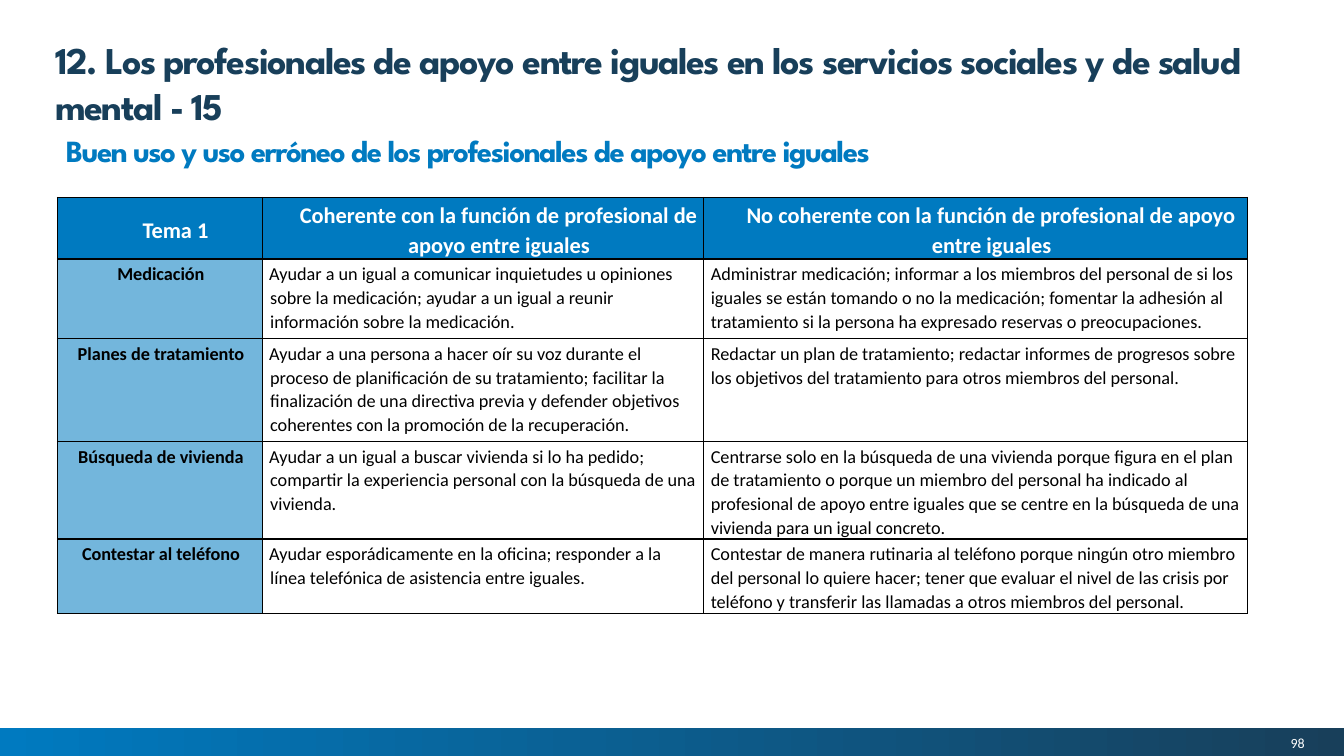
"""Build the slide on good and wrong use of peer support workers."""
from lxml.etree import SubElement
from pptx import Presentation
from pptx.dml.color import RGBColor
from pptx.enum.shapes import MSO_SHAPE
from pptx.enum.text import MSO_ANCHOR, PP_ALIGN
from pptx.oxml import parse_xml
from pptx.oxml.ns import nsdecls, qn
from pptx.util import Inches, Pt

NAVY, BLUE, SKY, WHITE, BLACK = "183F5A", "007AC0", "73B6DC", "FFFFFF", "000000"
HEAD, BODY = "League Spartan", "Calibri"
LEFT, MID, RIGHT = PP_ALIGN.LEFT, PP_ALIGN.CENTER, PP_ALIGN.RIGHT
TOP, CORE, BASE = MSO_ANCHOR.TOP, MSO_ANCHOR.MIDDLE, MSO_ANCHOR.BOTTOM


def tint(color, code):
    color.rgb = RGBColor.from_string(code)


def write(frame, text, code, space, align, **style):
    para = frame.paragraphs[0]
    para.line_spacing, para.alignment = space, align
    run = para.add_run()
    run.text = text
    for key, value in style.items():
        setattr(run.font, key, value)
    tint(run.font.color, code)
    return para


deck = Presentation()
deck.slide_width, deck.slide_height = Inches(13.33), Inches(7.5)
col, row = deck.slide_width / 100, deck.slide_height / 100
slide = deck.slides.add_slide(deck.slide_layouts[6])
shapes = slide.shapes

bar = shapes.add_shape(MSO_SHAPE.RECTANGLE, 0, int(96.27 * row),
                       deck.slide_width, int(3.73 * row))
bar.shadow.inherit = False
bar.line.fill.background()
bar.fill.gradient()
bar.fill.gradient_angle = 0
for stop, code, spot in zip(bar.fill.gradient_stops, (BLUE, NAVY), (0, 1)):
    tint(stop.color, code)
    stop.position = spot

labels = [
    ("12. Los profesionales de apoyo entre iguales en los servicios sociales y de salud mental - 15",
     (3.38, 4.13, 92.8, 6.27), (0.1, 0.05), TOP, NAVY, Pt(33), LEFT,
     dict(name=HEAD, size=Pt(27), bold=True)),
    ("Buen uso y uso erróneo de los profesionales de apoyo entre iguales",
     (4.9, 17.07, 91.1, 5.2), (0, 0), BASE, BLUE, Pt(33), LEFT,
     dict(name=HEAD, size=Pt(22), bold=True)),
    ("98", (83.57, 96.67, 13.5, 3.2), (0, 0), CORE, WHITE, 1.0, RIGHT,
     dict(name=BODY, size=Pt(10))),
]
for text, (x, y, wide, high), (side, edge), anchor, code, space, align, style in labels:
    box = shapes.add_textbox(int(x * col), int(y * row), int(wide * col), int(high * row))
    frame = box.text_frame
    frame.word_wrap, frame.vertical_anchor = True, anchor
    frame.margin_left = frame.margin_right = Inches(side)
    frame.margin_top = frame.margin_bottom = Inches(edge)
    para = write(frame, text, code, space, align, **style)
    if style["name"] == HEAD:
        para.runs[0].font._element.set("spc", "-100")

data = [
    ("Tema 1",
     "Coherente con la función de profesional de apoyo entre iguales",
     "No coherente con la función de profesional de apoyo entre iguales"),
    ("Medicación",
     "Ayudar a un igual a comunicar inquietudes u opiniones sobre la medicación; ayudar a un igual a reunir información sobre la medicación.",
     "Administrar medicación; informar a los miembros del personal de si los iguales se están tomando o no la medicación; fomentar la adhesión al tratamiento si la persona ha expresado reservas o preocupaciones."),
    ("Planes de tratamiento",
     "Ayudar a una persona a hacer oír su voz durante el proceso de planificación de su tratamiento; facilitar la finalización de una directiva previa y defender objetivos coherentes con la promoción de la recuperación.",
     "Redactar un plan de tratamiento; redactar informes de progresos sobre los objetivos del tratamiento para otros miembros del personal."),
    ("Búsqueda de vivienda",
     "Ayudar a un igual a buscar vivienda si lo ha pedido; compartir la experiencia personal con la búsqueda de una vivienda.",
     "Centrarse solo en la búsqueda de una vivienda porque figura en el plan de tratamiento o porque un miembro del personal ha indicado al profesional de apoyo entre iguales que se centre en la búsqueda de una vivienda para un igual concreto."),
    ("Contestar al teléfono",
     "Ayudar esporádicamente en la oficina; responder a la línea telefónica de asistencia entre iguales.",
     "Contestar de manera rutinaria al teléfono porque ningún otro miembro del personal lo quiere hacer; tener que evaluar el nivel de las crisis por teléfono y transferir las llamadas a otros miembros del personal."),
]
wides = (15.23, 32.86, 40.43)
highs = (8.13, 10.53, 13.6, 12.93, 9.8)
table = shapes.add_table(len(highs), len(wides), int(4.28 * col), int(26.13 * row),
                         int(sum(wides) * col), int(sum(highs) * row)).table
table.first_row = table.horz_banding = False
for part, wide in zip(table.columns, wides):
    part.width = int(wide * col)
for part, high in zip(table.rows, highs):
    part.height = int(high * row)

pads = dict(margin_left=0.07, margin_top=0.03, margin_right=0.05, margin_bottom=0)
for r, line in enumerate(data):
    for c, text in enumerate(line):
        cell = table.cell(r, c)
        for key, value in pads.items():
            setattr(cell, key, Inches(value))
        cell.vertical_anchor = TOP if r else CORE
        props = cell._tc.get_or_add_tcPr()
        for side in "LRTB":
            edge = parse_xml(f'<a:ln{side} {nsdecls("a")} w="12700"/>')
            fill = SubElement(edge, qn("a:solidFill"))
            SubElement(fill, qn("a:srgbClr"), val=BLACK)
            props.append(edge)
        if r and c:
            cell.fill.background()
        else:
            cell.fill.solid()
            tint(cell.fill.fore_color, SKY if r else BLUE)
        label = r == 0 or c == 0
        para = write(cell.text_frame, text, BLACK if r else WHITE, 1.07,
                     MID if label else LEFT,
                     name=BODY, size=Pt(13 if r else 16), bold=label)
        inset = 0.3 if r == 0 else (0.01, 0.01, 0)[c]
        form = para._p.get_or_add_pPr()
        form.set("marL", str(Inches(inset)))
        form.set("indent", str(Inches(-0.01)))

deck.save("out.pptx")
